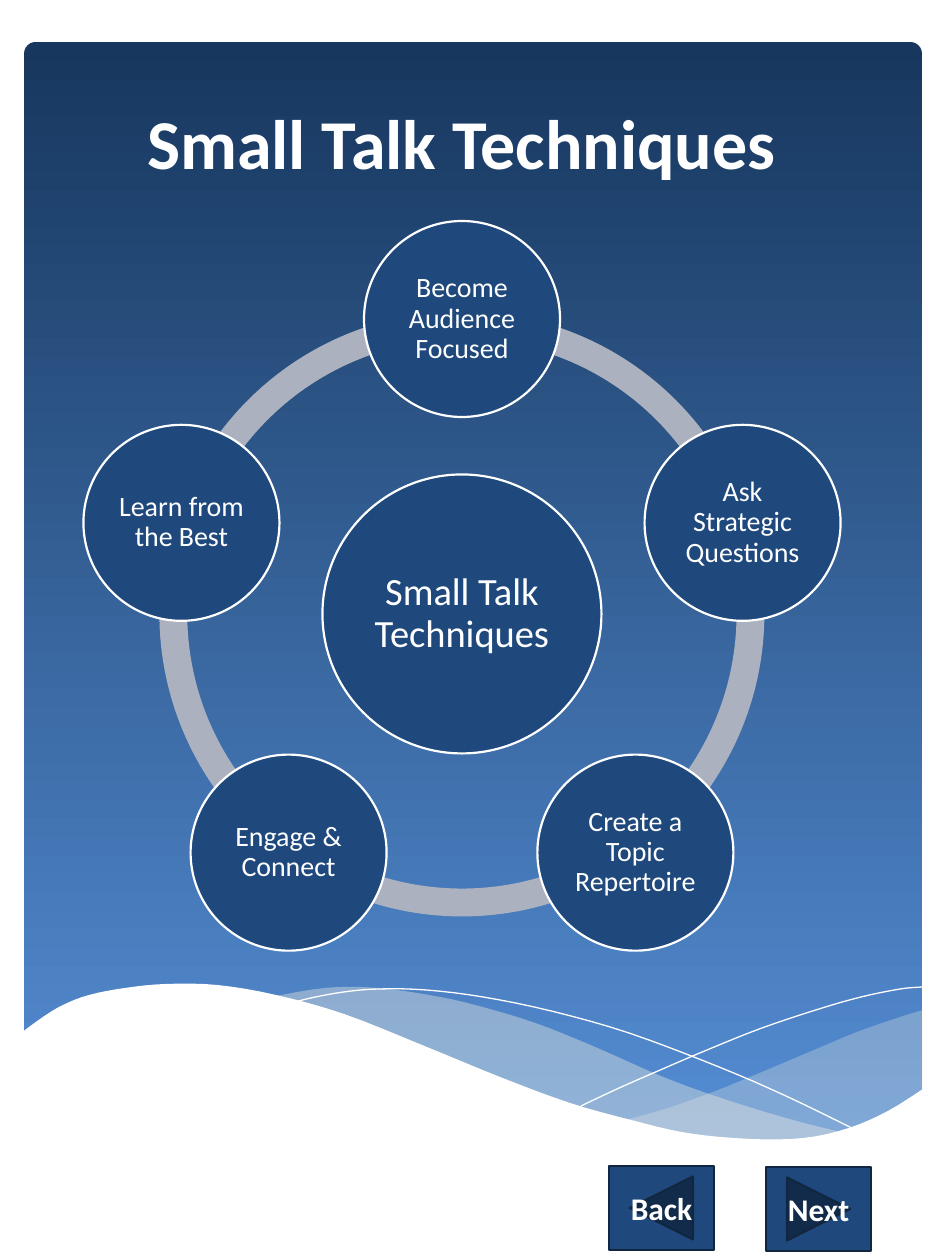
from dataclasses import dataclass
from math import cos, radians, sin

from lxml import etree
from pptx import Presentation
from pptx.dml.color import RGBColor
from pptx.enum.shapes import MSO_SHAPE
from pptx.enum.text import MSO_ANCHOR, PP_ALIGN
from pptx.oxml.ns import qn
from pptx.util import Emu, Pt

ROUNDED = MSO_SHAPE.ROUNDED_RECTANGLE
ELLIPSE = MSO_SHAPE.OVAL
ARC = MSO_SHAPE.BLOCK_ARC
BACK = MSO_SHAPE.ACTION_BUTTON_BACK_OR_PREVIOUS
NEXT = MSO_SHAPE.ACTION_BUTTON_FORWARD_OR_NEXT
CENTER = PP_ALIGN.CENTER
MIDDLE = MSO_ANCHOR.MIDDLE
BOTTOM = MSO_ANCHOR.BOTTOM

SCALE = 914400 / 126
TITLE_ONLY = 5
CURVE_STEPS = 4


@dataclass(frozen=True)
class Theme:
    font: str = "Calibri"
    white: str = "FFFFFF"
    sky_top: str = "17375E"
    sky_bottom: str = "558ED5"
    mist: str = "EEECE1"
    ring: str = "ACB1BF"
    navy: str = "1F497D"
    button_edge: str = "102641"
    title_size: int = 40
    hub_size: int = 22
    node_size: int = 16
    button_size: int = 18
    outline: float = 1.25


THEME = Theme()


@dataclass(frozen=True)
class Wave:
    edges: tuple
    fill: str = ""
    alpha: int = 100
    corners: tuple = ()


@dataclass(frozen=True)
class Button:
    kind: int
    label: str
    left: int
    top: int


WAVES = (
    Wave((((923, 1010), (897, 1018), (857, 1032), (814, 1050), (762, 1072),
           (713, 1092), (668, 1108), (626, 1120)),
          ((626, 1120), (667, 1130), (716, 1139), (770, 1142), (816, 1138),
           (857, 1126), (892, 1111), (923, 1090))), THEME.mist, 29),
    Wave((((844, 1133), (793, 1120), (733, 1102), (668, 1079), (595, 1047),
           (538, 1024), (486, 1008), (440, 997), (378, 988), (325, 988), (271, 997)),
          ((271, 997), (324, 1009), (363, 1022), (425, 1047), (501, 1079),
           (568, 1104), (630, 1123), (683, 1135), (742, 1143), (784, 1143),
           (820, 1139), (844, 1133))), THEME.mist, 40),
    Wave((((292, 1003), (311, 998), (344, 992), (379, 989), (426, 990), (483, 997),
           (551, 1011), (629, 1033), (719, 1067), (786, 1096), (858, 1131)),)),
    Wave((((581, 1106), (617, 1089), (658, 1071), (707, 1050), (762, 1028),
           (819, 1009), (861, 997), (900, 989), (922, 987)),)),
    Wave((((923, 1089), (888, 1111), (849, 1128), (804, 1138), (750, 1139),
           (687, 1133), (631, 1120), (570, 1103), (500, 1077), (422, 1045),
           (344, 1014), (276, 995), (217, 985), (166, 984), (125, 988),
           (89, 995), (63, 1005), (43, 1017), (21, 1033)),),
         THEME.white, corners=((21, 1229), (923, 1229))),
)
TECHNIQUES = (
    "Become Audience Focused",
    "Ask Strategic Questions",
    "Create a Topic Repertoire",
    "Engage & Connect",
    "Learn from the Best",
)
BUTTONS = (Button(BACK, "Back", 609, 1166), Button(NEXT, "Next", 766, 1167))
CENTER_X, CENTER_Y = 462, 614
ORBIT, RING, HUB, NODE = 295, 605, 279, 196


def px(length: float) -> Emu:
    return Emu(round(length * SCALE))


def color(value: str) -> RGBColor:
    return RGBColor.from_string(value)


def paint(shape, fill: str = "", line: str = "", width: float = 0) -> None:
    shape.shadow.inherit = False
    if fill:
        shape.fill.solid()
        shape.fill.fore_color.rgb = color(fill)
    else:
        shape.fill.background()
    if line:
        shape.line.color.rgb = color(line)
        shape.line.width = Pt(width)
    else:
        shape.line.fill.background()


def add_box(slide, kind: int, left: float, top: float, width: int, height: int):
    return slide.shapes.add_shape(kind, px(left), px(top), px(width), px(height))


def write(shape, text: str, size: int, bold: bool = False, anchor=MIDDLE) -> None:
    frame = shape.text_frame
    frame.text = text
    frame.word_wrap = True
    frame.vertical_anchor = anchor
    para = frame.paragraphs[0]
    para.alignment = CENTER
    font = para.runs[0].font
    font.name, font.size, font.bold = THEME.font, Pt(size), bold
    font.color.rgb = color(THEME.white)


def smooth(knots: tuple) -> list:
    padded = (knots[0], *knots, knots[-1])
    points = [knots[0]]
    for a, b, c, d in zip(padded, padded[1:], padded[2:], padded[3:]):
        for step in range(1, CURVE_STEPS + 1):
            t = step / CURVE_STEPS
            points.append(tuple(
                q + t * (r - p + t * (2 * p - 5 * q + 4 * r - s
                                      + t * (3 * q - p - 3 * r + s))) / 2
                for p, q, r, s in zip(a, b, c, d)))
    return points


def draw_wave(slide, wave: Wave) -> None:
    outline = [point for edge in wave.edges for point in smooth(edge)]
    points = [(px(x), px(y)) for x, y in (*outline, *wave.corners)]
    builder = slide.shapes.build_freeform(*points[0])
    builder.add_line_segments(points[1:], close=bool(wave.fill))
    shape = builder.convert_to_shape()
    paint(shape, wave.fill, "" if wave.fill else THEME.white)
    if wave.alpha < 100:
        tint = next(shape.element.spPr.iter(qn("a:srgbClr")))
        etree.SubElement(tint, qn("a:alpha")).set("val", str(wave.alpha * 1000))


def draw_backdrop(slide) -> None:
    panel = add_box(slide, ROUNDED, 24, 42, 898, 1109)
    panel.adjustments[0] = 0.013
    paint(panel)
    panel.fill.gradient()
    panel.fill.gradient_angle = 270
    for stop, tint, position in zip(panel.fill.gradient_stops,
                                    (THEME.sky_top, THEME.sky_bottom), (0, 1)):
        stop.color.rgb = color(tint)
        stop.position = position
    for wave in WAVES:
        draw_wave(slide, wave)


def draw_title(slide) -> None:
    title = slide.shapes.title
    title.left, title.top, title.width, title.height = map(px, (10, -42, 903, 232))
    write(title, "Small Talk Techniques", THEME.title_size, True, BOTTOM)
    slide.shapes.element.append(title.element)


def draw_disc(slide, x: float, y: float, size: int, text: str, points: int) -> None:
    disc = add_box(slide, ELLIPSE, x - size / 2, y - size / 2, size, size)
    paint(disc, THEME.navy, THEME.white, THEME.outline)
    write(disc, text, points)
    frame = disc.text_frame
    frame.margin_left = frame.margin_right = px(3)
    frame.margin_top = frame.margin_bottom = px(3)
    frame.paragraphs[0].line_spacing = 0.9


def draw_cycle(slide) -> None:
    step = 360 / len(TECHNIQUES)
    angles = [(270 + step * index) % 360 for index in range(len(TECHNIQUES))]
    for angle in angles:
        arc = add_box(slide, ARC, CENTER_X - RING / 2, CENTER_Y - RING / 2, RING, RING)
        arc.adjustments[0] = angle * 0.6
        arc.adjustments[1] = (angle + step) % 360 * 0.6
        arc.adjustments[2] = 0.046
        paint(arc, THEME.ring)
    draw_disc(slide, CENTER_X, CENTER_Y, HUB, "Small Talk Techniques", THEME.hub_size)
    for angle, text in zip(angles, TECHNIQUES):
        x = CENTER_X + ORBIT * cos(radians(angle))
        y = CENTER_Y + ORBIT * sin(radians(angle))
        draw_disc(slide, x, y, NODE, text, THEME.node_size)


def draw_button(slide, button: Button) -> None:
    shape = add_box(slide, button.kind, button.left, button.top, 105, 84)
    paint(shape, THEME.navy, THEME.button_edge, THEME.outline)
    write(shape, button.label, THEME.button_size, True)


def main() -> None:
    deck = Presentation()
    deck.slide_width, deck.slide_height = px(945), px(1260)
    slide = deck.slides.add_slide(deck.slide_layouts[TITLE_ONLY])
    draw_backdrop(slide)
    draw_title(slide)
    draw_cycle(slide)
    for button in BUTTONS:
        draw_button(slide, button)
    deck.save("out.pptx")


if __name__ == "__main__":
    main()
